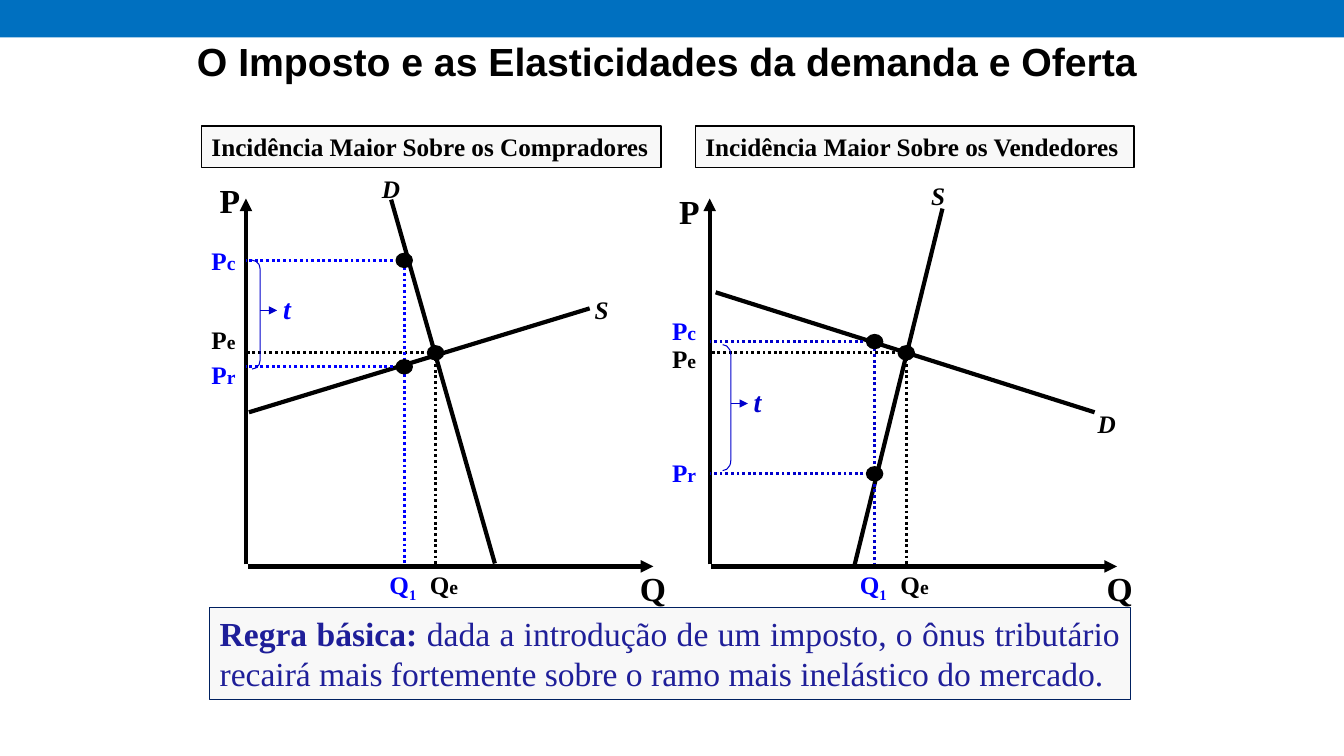
import pptx
import pptx.util
import pptx.dml.color
import pptx.enum.dml
import pptx.enum.shapes
import pptx.enum.text
import pptx.oxml.ns
from dataclasses import dataclass
from lxml import etree

Pt = pptx.util.Pt
Kind = pptx.enum.shapes.MSO_SHAPE
Align = pptx.enum.text.PP_ALIGN
Fit = pptx.enum.text.MSO_AUTO_SIZE
Anchor = pptx.enum.text.MSO_ANCHOR


@dataclass(frozen=True)
class Theme:
    bar: str = "0070C0"
    ink: str = "000000"
    blue: str = "0000FF"
    deep: str = "0000CC"
    rule: str = "1F1F99"
    edge: str = "002060"
    panel: str = "F8F8F8"
    sans: str = "Arial"
    serif: str = "Times New Roman"
    title: int = 28
    large: int = 24
    tax: int = 20
    base: int = 18
    small: int = 14


theme = Theme()


def tint(code):
    return pptx.dml.color.RGBColor.from_string(code)


def add_run(para, text, size, color, bold=True, italic=False, face=theme.serif):
    run = para.add_run()
    run.text = text
    font = run.font
    font.name, font.size = face, Pt(size)
    font.bold, font.italic = bold, italic
    font.color.rgb = tint(color)
    return run


def add_label(slide, x, y, w, text, size, color=theme.ink, italic=False, sub="", low=False):
    box = slide.shapes.add_textbox(Pt(x), Pt(y), Pt(w), Pt(size * 1.2 + 7.2))
    frame = box.text_frame
    frame.word_wrap, frame.auto_size = False, Fit.SHAPE_TO_FIT_TEXT
    para = frame.paragraphs[0]
    add_run(para, text, size, color, italic=italic)
    if sub:
        run = add_run(para, sub, theme.base if low else theme.small, color)
        if low:
            run.font._element.set("baseline", "-25000")


def add_line(slide, start, end, color=theme.ink, width=3, dots=False, arrow=False):
    ends = [Pt(n) for n in (*start, *end)]
    line = slide.shapes.add_connector(pptx.enum.shapes.MSO_CONNECTOR.STRAIGHT, *ends)
    line.line.color.rgb = tint(color)
    line.line.width = Pt(width)
    if dots:
        line.line.dash_style = pptx.enum.dml.MSO_LINE.ROUND_DOT
    qn = pptx.oxml.ns.qn
    if arrow:
        etree.SubElement(line.line._get_or_add_ln(), qn("a:tailEnd"), type="triangle")
    etree.SubElement(line._element.spPr, qn("a:effectLst"))


def add_form(slide, kind, box, fill=None, edge=None, width=1):
    form = slide.shapes.add_shape(kind, *[Pt(n) for n in box])
    form.shadow.inherit = False
    if fill:
        form.fill.solid()
        form.fill.fore_color.rgb = tint(fill)
    else:
        form.fill.background()
    if edge:
        form.line.color.rgb = tint(edge)
        form.line.width = Pt(width)
    else:
        form.line.fill.background()
    return form


def add_panel(slide, box, parts, size, color, edge, width, align, wrap):
    frame = add_form(slide, Kind.RECTANGLE, box, theme.panel, edge, width).text_frame
    frame.word_wrap, frame.auto_size = wrap, Fit.SHAPE_TO_FIT_TEXT
    frame.vertical_anchor = Anchor.TOP
    para = frame.paragraphs[0]
    para.alignment = align
    for text, bold in parts:
        add_run(para, text, size, color, bold)


def add_head(slide, box):
    add_form(slide, Kind.RECTANGLE, (0, -2, 960, 28.8), theme.bar)
    title = slide.shapes.title
    title.left, title.top, title.width, title.height = [Pt(n) for n in box]
    frame = title.text_frame
    frame.auto_size, frame.vertical_anchor = Fit.NONE, Anchor.MIDDLE
    para = frame.paragraphs[0]
    para.alignment = Align.RIGHT
    add_run(para, "O Imposto e as Elasticidades da demanda e Oferta",
            theme.title, theme.ink, face=theme.sans)


def add_graph(slide, box, data):
    left, top, wide, high = box
    blue = data["blue"]

    def at(x, y):
        return left + x, top + y

    # Axes
    add_line(slide, at(0, high - 1.4), at(0, 21.8), arrow=True)
    add_line(slide, at(1.2, high), at(wide, high), arrow=True)
    add_label(slide, *at(*data["P"]), 28.8, "P", theme.large)
    add_label(slide, *at(data["Q"], high - 2.8), 33.1, "Q", theme.large)

    # Demand and supply
    for name, wide_label in (("D", 27.4), ("S", 24.5)):
        start, end, spot = data[name]
        add_line(slide, at(*start), at(*end))
        add_label(slide, *at(*spot), wide_label, name, theme.base, italic=True)

    # Guides for equilibrium and taxed quantity
    even, taxed = data["even"], data["taxed"]
    pe, pc, pr = data["Pe"][0], data["Pc"][0], data["Pr"][0]
    foot = high - 1.4
    add_line(slide, at(even, pe), at(0, pe), width=2, dots=True)
    add_line(slide, at(even, pe), at(even, foot), width=2, dots=True)
    for price in (pc, pr):
        add_line(slide, at(taxed, price), at(0, price), blue, 2, dots=True)
    add_line(slide, at(taxed, pc + 5), at(taxed, foot), blue, 2, dots=True)

    for x, y in ((even, pe), (taxed, pc), (taxed, pr)):
        add_form(slide, Kind.OVAL, (*at(x - 5.7, y - 5), 11.5, 10), theme.ink, theme.ink)

    # Price and quantity labels
    for name, color in (("Pe", theme.ink), ("Pc", theme.blue), ("Pr", theme.blue)):
        add_label(slide, *at(data["side"], data[name][1]), 31.7, "P", theme.base,
                  color, sub=name[1])
    add_label(slide, *at(even - 11.2, high - 1.6), 34.6, "Q", theme.base, sub="e")
    add_label(slide, *at(taxed - 17.6, high - 1.6), 34.6, "Q", theme.base,
              theme.blue, sub="1", low=True)

    # Tax bracket
    x, y, tall = data["tax"]
    clip = add_form(slide, Kind.RIGHT_BRACKET, (*at(x, y), 5.8, tall),
                    edge=theme.deep, width=0.75)
    clip.adjustments[0] = tall / 72
    mid = y + tall / 2 - 3
    add_line(slide, at(x + 5.8, mid), at(x + 18, mid), theme.deep, 0.75, arrow=True)
    add_label(slide, *at(x + 15.1, mid - 17), 20.2, "t", theme.tax, blue, italic=True)


buyers = {
    "blue": theme.blue, "P": (-25.9, 5.3), "Q": 274.3, "side": -31.7,
    "D": ((103.7, 22.6), (177.8, 282.5), (90, 0.2)),
    "S": ((2.1, 174.5), (245.5, 100.3), (241.9, 86.6)),
    "even": 135.4, "taxed": 113,
    "Pe": (132, 108.2), "Pc": (66, 51.4), "Pr": (142, 133.4),
    "tax": (4.3, 65.8, 77.8),
}
sellers = {
    "blue": theme.deep, "P": (-28.8, 12.5), "Q": 276.5, "side": -33.9,
    "D": ((4.3, 88.8), (275, 174.5), (270, 168)),
    "S": ((102.9, 286.1), (166.3, 29), (151.2, 5.3)),
    "even": 140.4, "taxed": 117.8,
    "Pe": (132, 121.9), "Pc": (124, 101.8), "Pr": (218.4, 203.3),
    "tax": (9.3, 126.2, 90),
}


def main():
    deck = pptx.Presentation()
    deck.slide_width, deck.slide_height = Pt(960), Pt(540)
    slide = deck.slides.add_slide(deck.slide_layouts[5])
    add_head(slide, (123, 1.4, 696.2, 84.2))

    # Two markets, each under its heading
    for text, x, wide, axis, data in (
        ("Incidência Maior Sobre os Compradores", 144, 328.3, 175.7, buyers),
        ("Incidência Maior Sobre os Vendedores", 496.8, 313.2, 506.9, sellers),
    ):
        add_graph(slide, (axis, 120, 291, 284.6), data)
        add_panel(slide, (x, 90, wide, 29.5), [(text, True)], theme.base,
                  theme.ink, theme.ink, 1, Align.LEFT, False)

    # Basic rule
    add_panel(slide, (149.8, 434.2, 657.4, 65.5), [
        ("Regra básica: ", True),
        ("dada a introdução de um imposto, o ônus tributário recairá mais "
         "fortemente sobre o ramo mais inelástico do mercado.", False),
    ], theme.large, theme.rule, theme.edge, 0.75, Align.JUSTIFY, True)
    deck.save("out.pptx")


if __name__ == "__main__":
    main()
